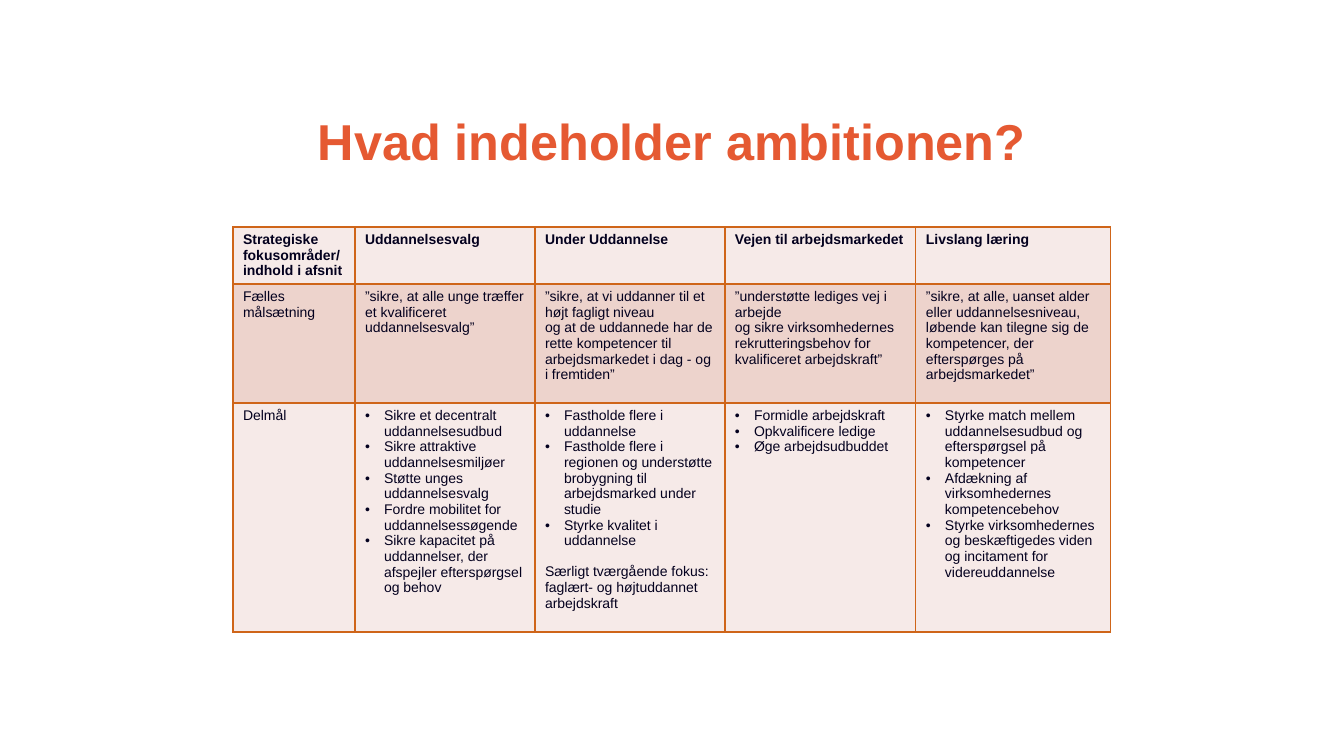
from lxml import etree
from pptx import Presentation
from pptx import util as u
from pptx.dml.color import RGBColor
from pptx.enum import text
from pptx.oxml import parse_xml
from pptx.oxml.ns import nsdecls, qn

PX = 914400 / 100.8
INK, ACCENT, BORDER = "03001E", "E55932", "CF6519"
ROW_FILLS = ["F6EAE8", "EDD3CC", "F6EAE8"]
COLUMN_WIDTHS = [122, 180, 190, 191, 195]
ROW_HEIGHTS = [57, 119, 229]
INDENT = round(19 * PX)

# Each cell is a list of paragraphs; a leading "•" makes a bullet.
ROWS = [
    [
        ["Strategiske fokusområder/\vindhold i afsnit"],
        ["Uddannelsesvalg"],
        ["Under Uddannelse"],
        ["Vejen til arbejdsmarkedet"],
        ["Livslang læring"],
    ],
    [
        ["Fælles målsætning"],
        ["”sikre, at alle unge træffer et kvalificeret uddannelsesvalg”"],
        ["”sikre, at vi uddanner til et højt fagligt niveau",
         "og at de uddannede har de rette kompetencer til arbejdsmarkedet i dag - og i fremtiden”"],
        ["”understøtte lediges vej i arbejde",
         "og sikre virksomhedernes rekrutteringsbehov for kvalificeret arbejdskraft”"],
        ["”sikre, at alle, uanset alder eller uddannelsesniveau,",
         "løbende kan tilegne sig de kompetencer, der efterspørges på arbejdsmarkedet”"],
    ],
    [
        ["Delmål"],
        ["•Sikre et decentralt uddannelsesudbud",
         "•Sikre attraktive uddannelsesmiljøer",
         "•Støtte unges uddannelsesvalg",
         "•Fordre mobilitet for uddannelsessøgende",
         "•Sikre kapacitet på uddannelser, der afspejler efterspørgsel og behov"],
        ["•Fastholde flere i uddannelse",
         "•Fastholde flere i regionen og understøtte brobygning til arbejdsmarked under studie",
         "•Styrke kvalitet i uddannelse",
         "Særligt tværgående fokus: faglært- og højtuddannet arbejdskraft"],
        ["•Formidle arbejdskraft",
         "•Opkvalificere ledige",
         "•Øge arbejdsudbuddet"],
        ["•Styrke match mellem uddannelsesudbud og efterspørgsel på kompetencer",
         "•Afdækning af virksomhedernes kompetencebehov",
         "•Styrke virksomhedernes og beskæftigedes viden og incitament for videreuddannelse"],
    ],
]


def px(n):
    return round(n * PX)


def write(tf, paragraphs, size=10, color=INK, bold=False, align=None, line=None):
    """Fill a text frame; plain text that follows a bullet list is set apart."""
    tf.word_wrap = True
    after_bullet = False
    for i, words in enumerate(paragraphs):
        p = tf.paragraphs[0] if i == 0 else tf.add_paragraph()
        bullet = words.startswith("•")
        p.text = words.removeprefix("•")
        p.alignment = align
        if line:
            p.line_spacing = u.Pt(line)
        if bullet:
            pPr = p._p.get_or_add_pPr()
            pPr.set("marL", str(INDENT))
            pPr.set("indent", str(-INDENT))
            etree.SubElement(pPr, qn("a:buFont")).set("typeface", "Arial")
            etree.SubElement(pPr, qn("a:buChar")).set("char", "•")
        elif after_bullet:
            p.space_before = u.Pt(11)
        after_bullet = bullet
        for r in p.runs:
            r.font.name, r.font.size, r.font.bold = "Arial", u.Pt(size), bold
            r.font.color.rgb = RGBColor.from_string(color)


prs = Presentation()
prs.slide_width, prs.slide_height = px(1344), px(756)
s = prs.slides.add_slide(prs.slide_layouts[5])

title = s.shapes.title
title.left, title.top, title.width, title.height = px(261), px(108), px(822), px(88)
tf = title.text_frame
tf.margin_left = tf.margin_top = tf.margin_right = tf.margin_bottom = 0
tf.vertical_anchor = text.MSO_ANCHOR.TOP
tf.auto_size = text.MSO_AUTO_SIZE.NONE
write(tf, ["Hvad indeholder ambitionen?"], size=36, color=ACCENT, bold=True,
      align=text.PP_ALIGN.CENTER, line=45)

table = s.shapes.add_table(len(ROWS), len(COLUMN_WIDTHS), px(233), px(227),
                           px(sum(COLUMN_WIDTHS)), px(sum(ROW_HEIGHTS))).table
table.horz_banding = False
for column, width in zip(table.columns, COLUMN_WIDTHS):
    column.width = px(width)
for row, height in zip(table.rows, ROW_HEIGHTS):
    row.height = px(height)

for i, (cells, fill) in enumerate(zip(ROWS, ROW_FILLS)):
    for j, paragraphs in enumerate(cells):
        cell = table.cell(i, j)
        write(cell.text_frame, paragraphs, bold=i == 0)
        cell.fill.solid()
        cell.fill.fore_color.rgb = RGBColor.from_string(fill)
        tcPr = cell._tc.get_or_add_tcPr()
        for k, side in enumerate("LRTB"):
            tcPr.insert(k, parse_xml(
                f'<a:ln{side} {nsdecls("a")} w="{u.Pt(1)}"><a:solidFill>'
                f'<a:srgbClr val="{BORDER}"/></a:solidFill></a:ln{side}>'))

prs.save("out.pptx")
